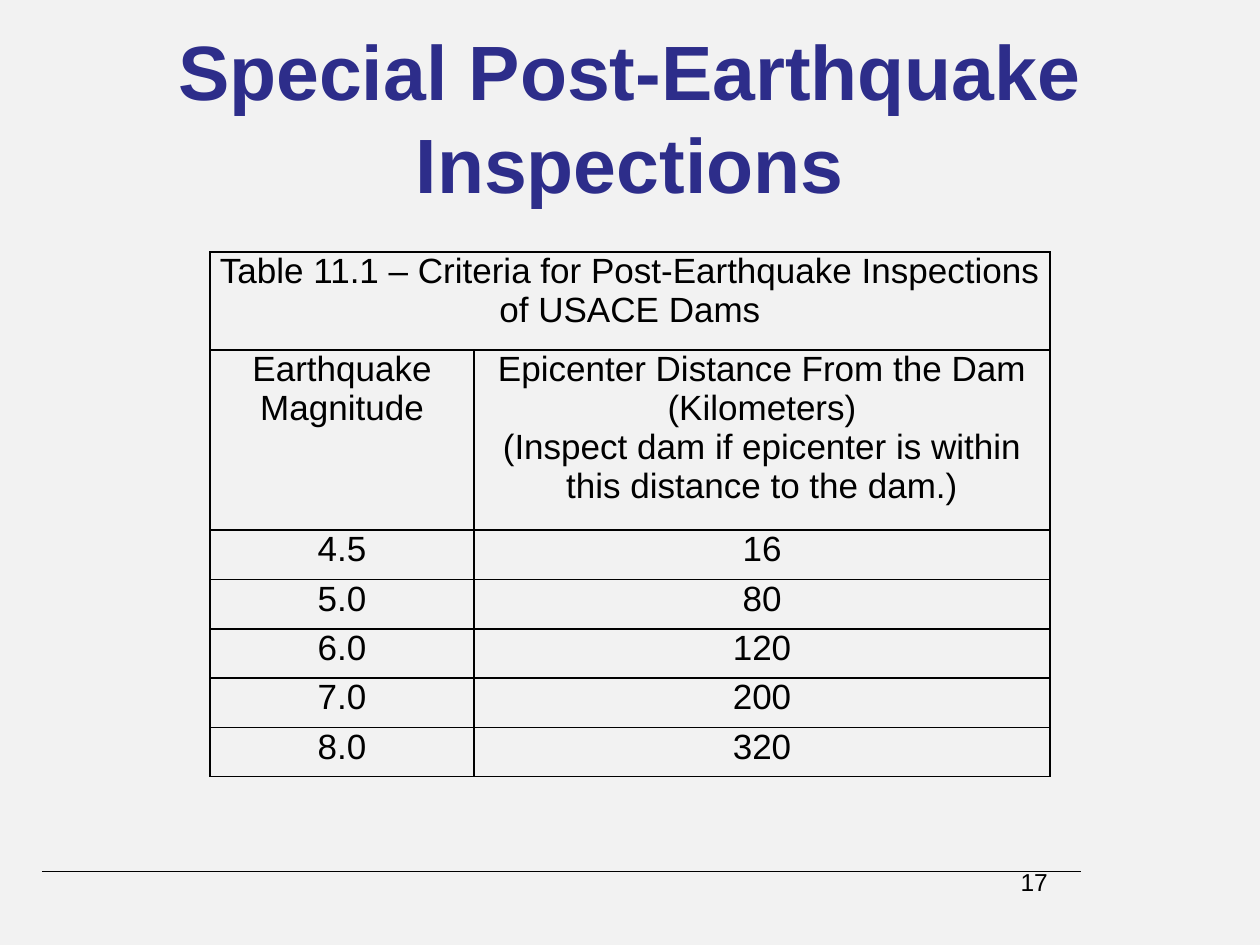
from lxml import etree
from pptx import Presentation
from pptx.dml.color import RGBColor
from pptx.enum import shapes, text
from pptx.oxml import ns
from pptx.util import Pt

COLORS = {"paper": "F2F2F2", "title": "2D2D8A", "ink": "000000"}


class SlideBuilder:
    """Holds the style and the current slide; lengths are points."""

    font = "Arial"

    def __init__(self, slide):
        self.slide = slide
        fill = slide.background.fill
        fill.solid()
        fill.fore_color.rgb = self.color("paper")

    def color(self, name):
        return RGBColor.from_string(COLORS[name])

    def add_lines(self, frame, lines, size, color="ink", bold=False):
        frame.word_wrap = True
        for index, line in enumerate(lines):
            paragraph = frame.paragraphs[0] if index == 0 else frame.add_paragraph()
            paragraph.alignment = text.PP_ALIGN.CENTER
            run = paragraph.add_run()
            run.text = line
            run.font.name = self.font
            run.font.size = Pt(size)
            run.font.bold = bold
            run.font.color.rgb = self.color(color)

    def title(self, wording, left, top, width, height):
        heading = self.slide.shapes.title
        heading.left, heading.top = Pt(left), Pt(top)
        heading.width, heading.height = Pt(width), Pt(height)
        frame = heading.text_frame
        frame.auto_size = text.MSO_AUTO_SIZE.NONE
        frame.vertical_anchor = text.MSO_ANCHOR.MIDDLE
        self.add_lines(frame, [wording], 44, "title", bold=True)

    def label(self, wording, left, top, width, height, size):
        box = self.slide.shapes.add_textbox(Pt(left), Pt(top), Pt(width), Pt(height))
        self.add_lines(box.text_frame, [wording], size)

    def rule(self, left, right, y):
        line = self.slide.shapes.add_connector(
            shapes.MSO_CONNECTOR.STRAIGHT, Pt(left), Pt(y), Pt(right), Pt(y))
        line.line.width = Pt(0.75)
        line.line.color.rgb = self.color("ink")
        etree.SubElement(line._element.spPr, ns.qn("a:effectLst"))

    def borders(self, cell, width=1):
        properties = cell._tc.get_or_add_tcPr()
        for side in ("lnL", "lnR", "lnT", "lnB"):
            edge = etree.SubElement(properties, ns.qn(f"a:{side}"), w=str(Pt(width)))
            fill = etree.SubElement(edge, ns.qn("a:solidFill"))
            etree.SubElement(fill, ns.qn("a:srgbClr"), val=COLORS["ink"])

    def table(self, rows, left, top, widths, heights):
        grid = self.slide.shapes.add_table(
            len(rows), len(widths), Pt(left), Pt(top),
            Pt(sum(widths)), Pt(sum(heights))).table
        grid.first_row = grid.horz_banding = False
        for column, width in zip(grid.columns, widths):
            column.width = Pt(width)
        for row, height in zip(grid.rows, heights):
            row.height = Pt(height)

        for r, row in enumerate(rows):
            for c in range(len(widths)):
                cell = grid.cell(r, c)
                cell.margin_left = cell.margin_right = Pt(5)
                cell.margin_top = cell.margin_bottom = 0
                self.borders(cell)
                cell.fill.background()
                if c < len(row):
                    self.add_lines(cell.text_frame, row[c].split("\n"), 20)
            # A row with fewer entries than columns spans the full width
            if len(row) < len(widths):
                grid.cell(r, 0).merge(grid.cell(r, len(widths) - 1))


def main():
    deck = Presentation()
    deck.slide_width, deck.slide_height = Pt(720), Pt(540)
    page = SlideBuilder(deck.slides.add_slide(deck.slide_layouts[5]))

    # Footer rule and page number
    page.rule(24, 618, 498)
    page.label("17", 516, 492, 150, 36, size=14)

    # Title
    page.title("Special Post-Earthquake Inspections", 36, 21.5, 648, 90)

    # Inspection criteria: caption, headings, then magnitude and distance
    criteria = [
        ("Table 11.1 – Criteria for Post-Earthquake Inspections of USACE Dams",),
        ("Earthquake Magnitude",
         "Epicenter Distance From the Dam (Kilometers)\n"
         "(Inspect dam if epicenter is within this distance to the dam.)"),
        ("4.5", "16"),
        ("5.0", "80"),
        ("6.0", "120"),
        ("7.0", "200"),
        ("8.0", "320"),
    ]
    page.table(criteria, 120, 144, widths=[151, 329],
               heights=[56, 103] + [28.2] * 5)

    deck.save("out.pptx")


if __name__ == "__main__":
    main()
